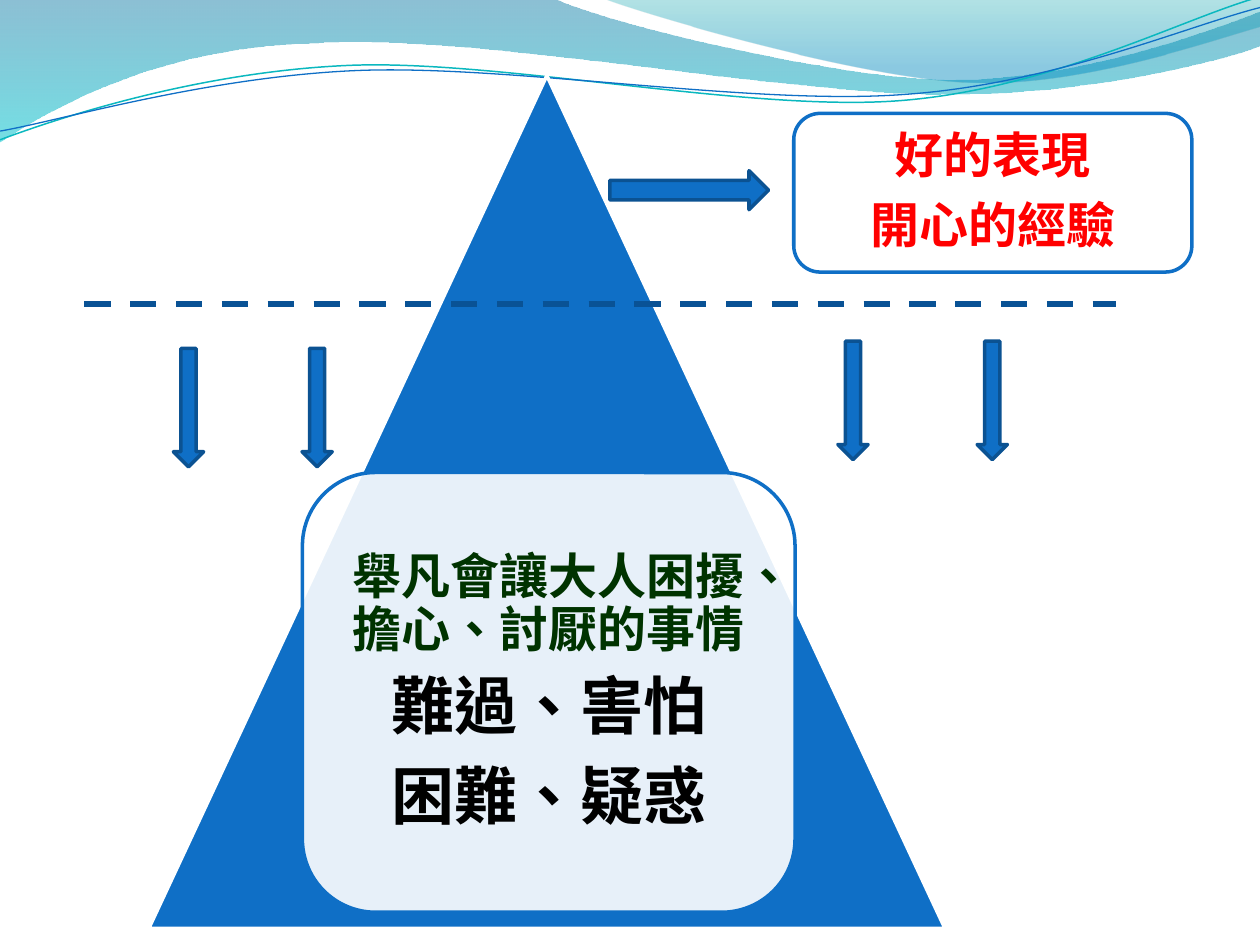
"""Builds an iceberg slide: visible behaviour above the line, hidden feelings below."""
import pptx
import pptx.dml.color
import pptx.enum.dml
import pptx.enum.lang
import pptx.enum.shapes
import pptx.enum.text
import pptx.oxml.ns
import pptx.util
from lxml import etree

Pt = pptx.util.Pt
qn = pptx.oxml.ns.qn
SHAPE = pptx.enum.shapes.MSO_SHAPE

THEME = {
    "blue": "0F6FC6", "edge": "0B5292", "divider": "095295", "white": "FFFFFF",
    "teal": "0AB8BF", "good": "FF0000", "trouble": "003300", "feeling": "000000",
    "sans": "Arial", "serif": "TeX Gyre Pagella", "text": 28, "large": 36,
    "inset": 8.64, "outline": 2, "panel_opacity": 90,
}

WAVES = [
    {"start": (0, 0),
     "steps": [[(316.8, -0.7)],
               [(342.7, 12.2), (478, 45.4), (545.8, 45.4)],
               [(614.2, 45.4), (689.8, 18.7), (720, 6.5)],
               [(720.7, 25.9)],
               [(707.8, 31.7), (626.4, 54.7), (537.1, 54)],
               [(447.8, 54), (275, 20.2), (185, 24.5)],
               [(92.9, 25.9), (33.1, 59.8), (-0.7, 81.4)]],
     "stops": [(0, "0074A1", 45), (1, "00C6CF", 55)]},
    {"start": (344.9, -0.7),
     "steps": [[(366.5, 7.9), (491, 44.6), (553.7, 46.8)],
               [(616.3, 49.7), (691.9, 23), (720, 15.1)],
               [(720, 0)]],
     "stops": [(0, "00A1A9", 30), (0.8, "008BBF", 45)]},
    {"start": (0, 79.9),
     "steps": [[(34.6, 67), (113.8, 41), (199.4, 37.4)],
               [(284.4, 33.8), (427, 64.1), (513.4, 57.6)],
               [(599.8, 51.1), (675.4, 10.8), (718.6, -1.4)]],
     "line": ("teal", 0.85)},
    {"start": (0, 74.9),
     "steps": [[(33.8, 69.1), (118.1, 43.9), (203.8, 40.3)],
               [(290.2, 36.7), (429.8, 60.5), (516.2, 54)],
               [(601.9, 48.2), (677.5, 15.1), (720, 4.3)]],
     "line": ("blue", 0.75)},
]

ICEBERG = (85, 43.2, 455, 487.4)
PANELS = [
    ((453.6, 64.8, 227.5, 90.7),
     [("好的表現", "text", "serif", "good"),
      ("開心的經驗", "text", "serif", "good")]),
    ((172.8, 270, 281.5, 251.3),
     [("舉凡會讓大人困擾、擔心、討厭的事情", "text", "sans", "trouble"),
      ("難過、害怕", "large", "sans", "feeling"),
      ("困難、疑惑", "large", "sans", "feeling")]),
]
RIGHT_ARROW = (348.5, 97.5, 90.7, 22.3)
WATERLINE = (48.2, 637.9, 173.7)
DOWN_ARROWS = [(99.1, 199.1), (172.6, 199.1), (478.8, 195), (558.4, 195)]
DOWN_SIZE = (17.3, 67.7)


def color(value):
    return pptx.dml.color.RGBColor.from_string(value)


def set_opacity(color_element, percent):
    alpha = etree.SubElement(color_element, qn("a:alpha"))
    alpha.set("val", str(percent * 1000))


def set_line(shape, name, width):
    shape.line.color.rgb = color(THEME[name])
    shape.line.width = Pt(width)


def add_shape(slide, kind, box, fill, line):
    shape = slide.shapes.add_shape(kind, *map(Pt, box))
    shape.shadow.inherit = False
    shape.fill.solid()
    shape.fill.fore_color.rgb = color(THEME[fill])
    set_line(shape, line, THEME["outline"])
    return shape


def bend_segments(shape, steps):
    segments = list(shape._element.spPr.iter(qn("a:lnTo")))
    for segment, step in zip(segments, steps):
        if len(step) == 1:
            continue
        curve = etree.Element(qn("a:cubicBezTo"))
        for x, y in step:
            etree.SubElement(curve, qn("a:pt"), x=str(Pt(x) - shape.left), y=str(Pt(y) - shape.top))
        segment.getparent().replace(segment, curve)


def add_wave(slide, wave):
    anchors = [tuple(map(Pt, point)) for point in [wave["start"], *(step[-1] for step in wave["steps"])]]
    builder = slide.shapes.build_freeform(*anchors[0])
    builder.add_line_segments(anchors[1:], close="stops" in wave)
    shape = builder.convert_to_shape()
    bend_segments(shape, wave["steps"])
    shape.shadow.inherit = False
    if "line" in wave:
        shape.fill.background()
        set_line(shape, *wave["line"])
        return
    shape.line.fill.background()
    shape.fill.gradient()
    shape.fill.gradient_angle = 270
    tags = shape._element.spPr.iter(qn("a:gs"))
    for stop, tag, (position, value, opacity) in zip(shape.fill.gradient_stops, tags, wave["stops"]):
        stop.position = position
        stop.color.rgb = color(value)
        set_opacity(tag[0], opacity)


def add_panel(slide, box, lines):
    panel = add_shape(slide, SHAPE.ROUNDED_RECTANGLE, box, "white", "blue")
    fill = panel._element.spPr.find(qn("a:solidFill"))
    set_opacity(fill[0], THEME["panel_opacity"])
    frame = panel.text_frame
    frame.word_wrap = True
    frame.vertical_anchor = pptx.enum.text.MSO_ANCHOR.MIDDLE
    frame.margin_left = frame.margin_right = Pt(THEME["inset"])
    frame.margin_top = frame.margin_bottom = Pt(THEME["inset"])
    for index, (text, size, font, ink) in enumerate(lines):
        paragraph = frame.add_paragraph() if index else frame.paragraphs[0]
        paragraph.alignment = pptx.enum.text.PP_ALIGN.CENTER
        paragraph.line_spacing = 0.9
        paragraph.space_after = Pt(THEME[size] * 0.35)
        run = paragraph.add_run()
        run.text = text
        run.font.language_id = pptx.enum.lang.MSO_LANGUAGE_ID.TRADITIONAL_CHINESE
        run.font.name = THEME[font]
        run.font.size = Pt(THEME[size])
        run.font.bold = True
        run.font.color.rgb = color(THEME[ink])


def add_waterline(slide):
    left, right, y = map(Pt, WATERLINE)
    line = slide.shapes.add_connector(pptx.enum.shapes.MSO_CONNECTOR.STRAIGHT, left, y, right, y)
    set_line(line, "divider", 3.75)
    line.line.dash_style = pptx.enum.dml.MSO_LINE.DASH
    etree.SubElement(line._element.spPr, qn("a:effectLst"))


def main():
    presentation = pptx.Presentation()
    presentation.slide_width, presentation.slide_height = Pt(720), Pt(540)
    slide = presentation.slides.add_slide(presentation.slide_layouts[6])
    for wave in WAVES:
        add_wave(slide, wave)
    add_shape(slide, SHAPE.ISOSCELES_TRIANGLE, ICEBERG, "blue", "white")
    for box, lines in PANELS:
        add_panel(slide, box, lines)
    add_shape(slide, SHAPE.RIGHT_ARROW, RIGHT_ARROW, "blue", "edge")
    add_waterline(slide)
    for corner in DOWN_ARROWS:
        add_shape(slide, SHAPE.DOWN_ARROW, corner + DOWN_SIZE, "blue", "edge")
    presentation.save("out.pptx")


if __name__ == "__main__":
    main()
